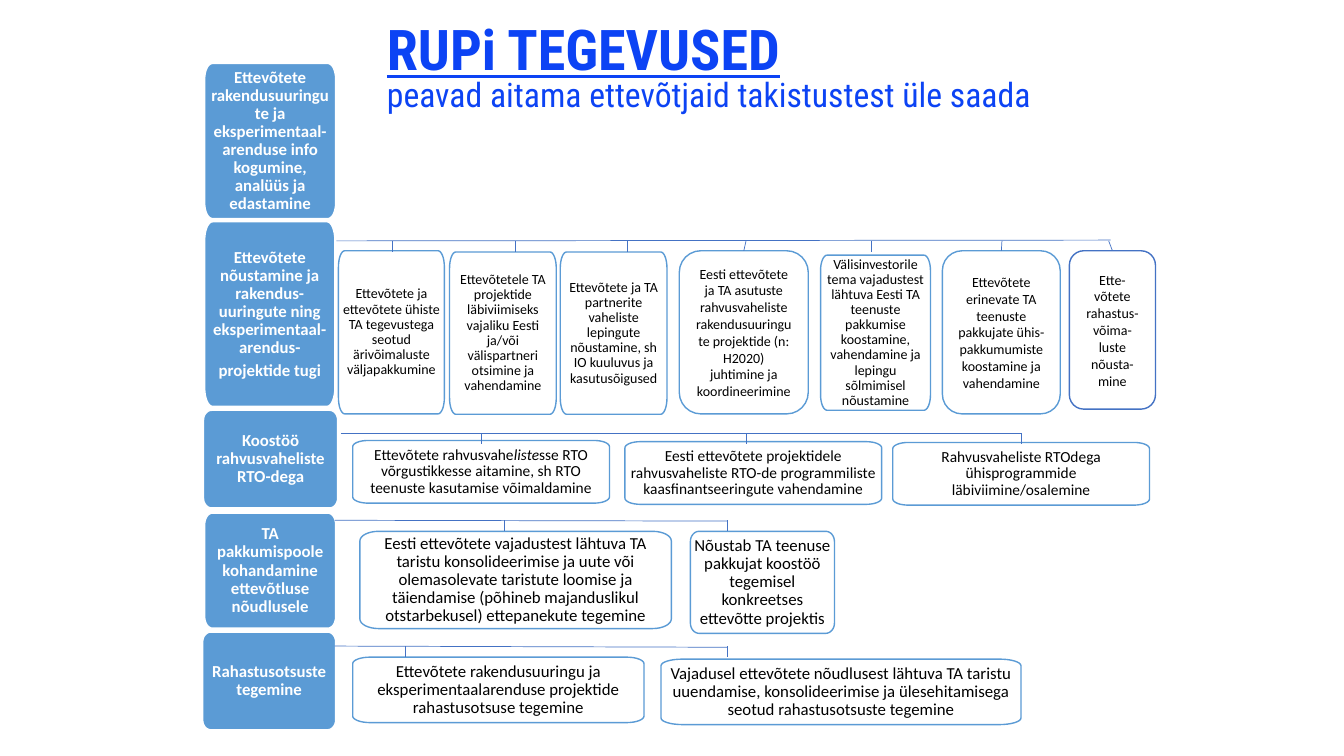
from math import cos, pi, sin

from lxml import etree
from pptx import Presentation
from pptx.dml.color import RGBColor
from pptx.enum.shapes import MSO_CONNECTOR, MSO_SHAPE
from pptx.enum.text import MSO_ANCHOR, MSO_AUTO_SIZE, PP_ALIGN
from pptx.oxml.ns import qn
from pptx.util import Cm, Pt

LINE, ROUND = MSO_CONNECTOR.STRAIGHT, MSO_SHAPE.ROUNDED_RECTANGLE
MIDDLE, CENTER, LEFT = MSO_ANCHOR.MIDDLE, PP_ALIGN.CENTER, PP_ALIGN.LEFT
FIXED = MSO_AUTO_SIZE.NONE
SKY, BLUE, INK, WHITE, BLACK = "5B9BD5", "4472C4", "0C43F4", "FFFFFF", "000000"

# Content: lengths in cm, boxes as (left, top, width, height)
TITLE = [("RUPi TEGEVUSED", 40.1, True),
         ("peavad aitama ettevõtjaid takistustest üle saada", 24.1, False)]

LABELS = [
    ((5.16, 1.6, 3.3, 3.91), "Ettevõtete rakendusuuringute ja eksperimentaal-arenduse "
     "info kogumine, analüüs ja edastamine"),
    ((5.16, 5.59, 3.28, 4.65), "Ettevõtete nõustamine ja rakendus-uuringute ning "
     "eksperimentaal-arendus-\nprojektide tugi"),
    ((5.13, 10.34, 3.38, 2.46), "Koostöö rahvusvaheliste RTO-dega"),
    ((5.16, 12.93, 3.3, 2.9), "TA pakkumispoole kohandamine ettevõtluse nõudlusele"),
    ((5.11, 15.93, 3.35, 2.46), "Rahastusotsuste tegemine"),
]

# Rail is (x1, y1, x2, y2); a card is (box, stem x, kind, text); |marks| italics
ROWS = [
    {"rail": (8.48, 6.07, 27.99, 6.05), "size": 10, "cards": [
        ((8.53, 6.32, 2.67, 4.11), 9.88, "soft",
         "Ettevõtete ja ettevõtete ühiste TA tegevustega seotud "
         "ärivõimaluste väljapakkumine"),
        ((11.33, 6.35, 2.69, 4.09), 12.98, "soft",
         "Ettevõtetele TA projektide läbiviimiseks vajaliku Eesti ja/või "
         "välispartneri otsimine ja vahendamine"),
        ((14.12, 6.35, 2.69, 4.09), 15.8, "soft",
         "Ettevõtete ja TA partnerite vaheliste lepingute nõustamine, "
         "sh IO kuuluvus ja kasutusõigused"),
        ((17.12, 6.32, 3.25, 4.11), 18.8, "round",
         "Eesti ettevõtete ja TA asutuste rahvusvaheliste rakendusuuringute "
         "projektide (n: H2020) juhtimine ja koordineerimine"),
        ((20.68, 6.43, 2.77, 3.91), 21.97, "soft",
         "Välisinvestorile tema vajadustest lähtuva Eesti TA teenuste pakkumise "
         "koostamine, vahendamine ja lepingu sõlmimisel nõustamine"),
        ((23.75, 6.32, 2.97, 4.11), 25.25, "round",
         "Ettevõtete erinevate TA teenuste pakkujate ühis-pakkumumiste "
         "koostamine ja vahendamine"),
        ((26.95, 6.32, 2.17, 3.99), 27.94, "dark",
         "Ette-võtete rahastus-võima-luste nõusta-mine"),
    ]},
    {"rail": (8.59, 10.92, 25.73, 10.92), "size": 11, "cards": [
        ((8.89, 11.1, 6.47, 1.58), 12.12, "soft",
         "Ettevõtete rahvusvahe|liste|sse RTO võrgustikkesse aitamine, "
         "sh RTO teenuste kasutamise võimaldamine"),
        ((15.75, 11.13, 6.47, 1.58), 18.8, "soft",
         "Eesti ettevõtete projektidele rahvusvaheliste RTO-de programmiliste "
         "kaasfinantseeringute vahendamine"),
        ((22.5, 11.15, 6.47, 1.58), 25.73, "soft",
         "Rahvusvaheliste RTOdega ühisprogrammide läbiviimine/osalemine"),
    ]},
    {"rail": (8.43, 13.11, 18.34, 13.13), "size": 12, "cards": [
        ((9.07, 13.39, 7.85, 2.45), 12.7, "soft",
         "Eesti ettevõtete vajadustest lähtuva TA taristu konsolideerimise ja uute "
         "või olemasolevate taristute loomise ja täiendamise (põhineb majanduslikul "
         "otstarbekusel) ettepanekute tegemine"),
        ((17.4, 13.39, 3.63, 2.57), 18.34, "soft",
         "Nõustab TA teenuse pakkujat koostöö tegemisel konkreetses "
         "ettevõtte projektis"),
    ]},
    {"rail": (8.43, 16.28, 18.34, 16.31), "size": 12, "cards": [
        ((8.89, 16.56, 7.34, 1.65), 10.21, "soft",
         "Ettevõtete rakendusuuringu ja eksperimentaalarenduse projektide "
         "rahastusotsuse tegemine"),
        ((16.66, 16.61, 9.07, 1.65), 18.34, "soft",
         "Vajadusel ettevõtete nõudlusest lähtuva TA taristu uuendamise, "
         "konsolideerimise ja ülesehitamisega seotud rahastusotsuste tegemine"),
    ]},
]
DROP = 0.28

# Formats per kind of box
TIGHT = {"margin_left": Cm(0.1), "margin_right": Cm(0.1),
         "margin_top": Cm(0.08), "margin_bottom": Cm(0.08)}
WIDE = {"margin_left": Cm(0.25), "margin_right": Cm(0.25),
        "margin_top": Cm(0.13), "margin_bottom": Cm(0.13)}
DENSE = {"alignment": CENTER, "line_spacing": 0.9, "space_after": Pt(3)}
PLAIN = {"alignment": CENTER}
KINDS = {
    "label": {"fill": SKY, "line": WHITE, "font": WHITE, "frame": TIGHT, "para": DENSE},
    "soft": {"fill": WHITE, "line": SKY, "font": BLACK, "frame": TIGHT, "para": DENSE},
    "round": {"fill": WHITE, "line": SKY, "font": BLACK, "frame": WIDE, "para": PLAIN},
    "dark": {"fill": WHITE, "line": BLUE, "font": BLACK, "frame": WIDE, "para": PLAIN},
}


def rgb(code):
    return RGBColor.from_string(code)


def put(obj, vals):
    for key, val in vals.items():
        setattr(obj, key, val)


def add_run(para, text, name, size, color, **style):
    run = para.add_run()
    run.text = text
    put(run.font, {"name": name, "size": Pt(size), **style})
    run.font.color.rgb = rgb(color)


def soft_box(box):
    """Box whose corners are quarter ellipses in proportion to its sides."""
    x, y, w, h = box
    rx, ry, steps = 0.06 * w, 0.1 * h, 8
    hubs = [(x + w - rx, y + h - ry), (x + rx, y + h - ry),
            (x + rx, y + ry), (x + w - rx, y + ry)]
    dots = []
    for turn, (cx, cy) in enumerate(hubs):
        for step in range(steps + 1):
            ang = (turn + step / steps) * pi / 2
            dots.append((Cm(cx + rx * cos(ang)), Cm(cy + ry * sin(ang))))
    path = shapes.build_freeform(*dots[0])
    path.add_line_segments(dots[1:], close=True)
    return path.convert_to_shape()


def add_box(box, kind, text, size):
    look = KINDS[kind]
    if kind in ("label", "soft"):
        shape = soft_box(box)
    else:
        shape = shapes.add_shape(ROUND, *map(Cm, box))
    shape.shadow.inherit = False
    shape.fill.solid()
    shape.fill.fore_color.rgb = rgb(look["fill"])
    if kind == "soft":
        tint = shape.fill._xPr.find(qn("a:solidFill"))[0]
        etree.SubElement(tint, qn("a:alpha"), val="90000")
    shape.line.color.rgb = rgb(look["line"])
    shape.line.width = Pt(1)
    frame = shape.text_frame
    put(frame, {"word_wrap": True, "vertical_anchor": MIDDLE, **look["frame"]})
    for num, words in enumerate(text.split("\n")):
        para = frame.add_paragraph() if num else frame.paragraphs[0]
        put(para, look["para"])
        for part, bit in enumerate(words.split("|")):
            add_run(para, bit, "Calibri", size, look["font"],
                    bold=kind == "label", italic=part % 2 == 1)
    return shape


def add_line(*ends):
    line = shapes.add_connector(LINE, *map(Cm, ends))
    line.line.color.rgb = rgb(BLUE)
    line.line.width = Pt(0.5)
    etree.SubElement(line._element.spPr, qn("a:effectLst"))
    return line


deck = Presentation()
deck.slide_width, deck.slide_height = Cm(33.87), Cm(19.05)
slide = deck.slides.add_slide(deck.slide_layouts[5])
shapes = slide.shapes

# Title
head = shapes.title
put(head, {"left": Cm(9.75), "top": Cm(0.56), "width": Cm(19.5), "height": Cm(2.44)})
put(head.text_frame, {"margin_left": 0, "margin_right": 0, "margin_top": 0,
                      "margin_bottom": 0, "vertical_anchor": MIDDLE,
                      "word_wrap": True, "auto_size": FIXED})
para = head.text_frame.paragraphs[0]
put(para, {"alignment": LEFT, "line_spacing": 0.8})
for num, (text, size, strong) in enumerate(TITLE):
    if num:
        para.add_line_break()
    add_run(para, text, "Roboto Condensed", size, INK, bold=strong, underline=strong)

# Left column
for box, text in LABELS:
    add_box(box, "label", text, 12)

# Rails, cards and the stems between them
for row in ROWS:
    add_line(*row["rail"])
    top = row["rail"][1]
    for box, x, kind, text in row["cards"]:
        card = add_box(box, kind, text, row["size"])
        stem = add_line(x, top, x, top + DROP)
        if kind != "soft":
            stem.end_connect(card, 0)

deck.save("out.pptx")
